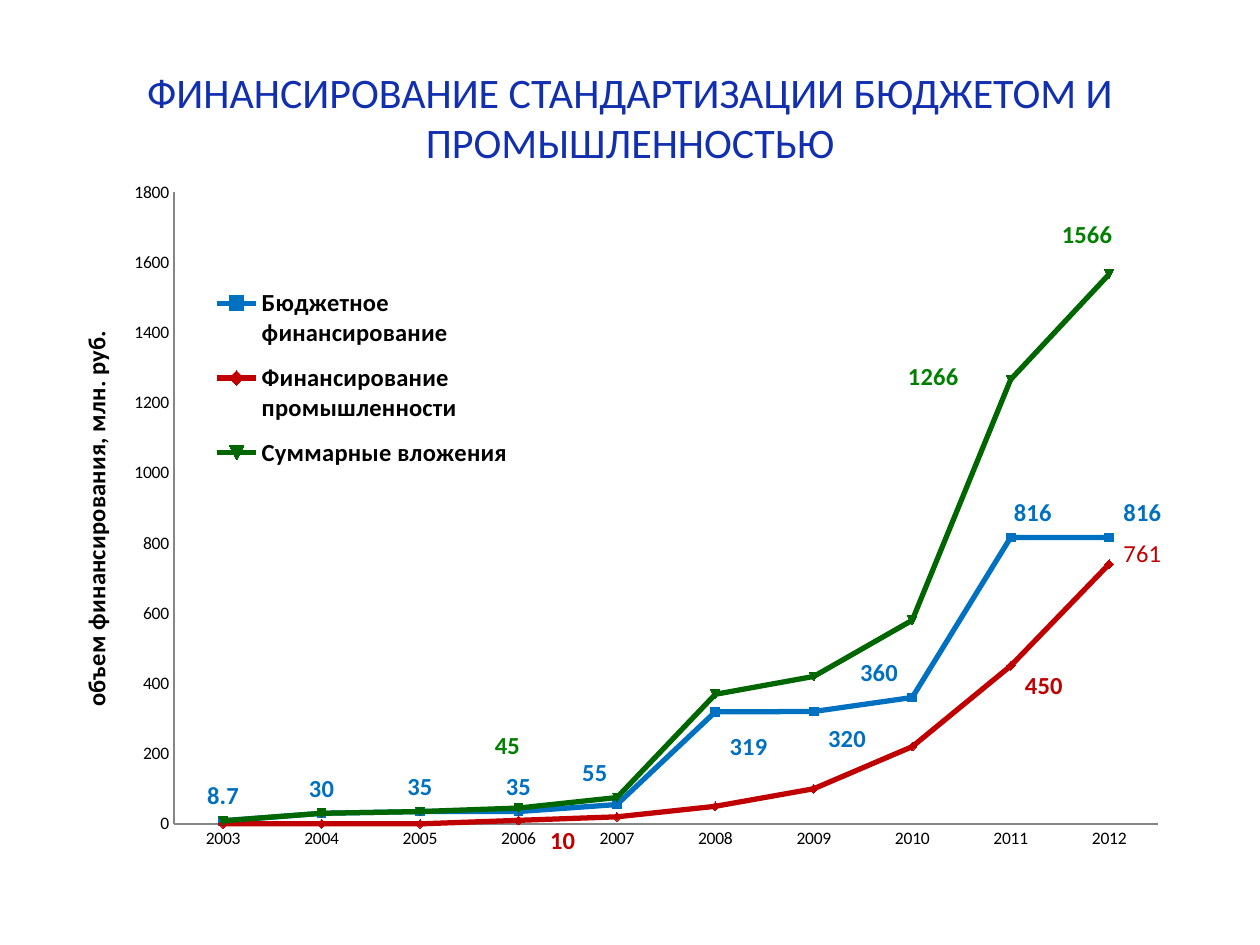
from lxml import etree
from pptx import Presentation
from pptx.chart.data import CategoryChartData
from pptx.dml.color import RGBColor
from pptx.enum.chart import XL_CHART_TYPE, XL_LABEL_POSITION, XL_LEGEND_POSITION, XL_TICK_MARK
from pptx.enum.text import MSO_ANCHOR, PP_ALIGN
from pptx.oxml.ns import qn
from pptx.util import Inches, Pt

LINE_MARKERS = XL_CHART_TYPE.LINE_MARKERS
ABOVE = XL_LABEL_POSITION.ABOVE
LEGEND_RIGHT = XL_LEGEND_POSITION.RIGHT
NO_TICKS = XL_TICK_MARK.NONE
MIDDLE = MSO_ANCHOR.MIDDLE
CENTER = PP_ALIGN.CENTER

FONT = "Calibri"
TITLE_BLUE = RGBColor(0x11, 0x2F, 0xAF)
BLACK = RGBColor(0, 0, 0)
AXIS_GRAY = RGBColor(0x86, 0x86, 0x86)
BLUE = RGBColor(0x00, 0x70, 0xC0)
RED = RGBColor(0xC0, 0x00, 0x00)
DARK_GREEN = RGBColor(0x00, 0x66, 0x00)
GREEN = RGBColor(0x00, 0x80, 0x00)

YEARS = [str(year) for year in range(2003, 2013)]

# Name, values, line colour, label colour, label every point,
# label shifts {point: (x, y)} as shares of the chart
SERIES = [
    ("Бюджетное финансирование", (8.7, 30, 35, 35, 55, 319, 320, 360, 816, 816),
     BLUE, BLUE, True,
     {4: (-0.02, -0.01), 5: (0.03, 0.08), 6: (0.03, 0.07),
      7: (-0.03, 0), 8: (0.02, 0), 9: (0.03, 0)}),
    ("Финансирование промышленности", (0, 0, 0, 10, 20, 50, 100, 220, 450, 740),
     RED, RED, False,
     {3: (0.04, 0.06), 8: (0.03, 0.06), 9: (0.03, 0.02)}),
    ("Суммарные вложения", (8.7, 30, 35, 45, 75, 369, 420, 580, 1266, 1566),
     DARK_GREEN, GREEN, False,
     {3: (-0.01, -0.05), 8: (-0.07, 0.03), 9: (-0.02, -0.02)}),
]


def format_font(font, size, color=BLACK, bold=False):
    font.name = FONT
    font.size = Pt(size)
    font.bold = bold
    font.color.rgb = color


def write_text(frame, text, size, color=BLACK, bold=False, align=None):
    para = frame.paragraphs[0]
    para.alignment = align
    span = para.add_run()
    span.text = text
    format_font(span.font, size, color, bold)


def place(element, index, mode="edge", target=None, **fractions):
    """Give a chart part a manual layout, as its child number index."""
    for old in element.findall(qn("c:layout")):
        element.remove(old)
    layout = etree.Element(qn("c:layout"))
    manual = etree.SubElement(layout, qn("c:manualLayout"))
    settings = {}
    if target:
        settings["layoutTarget"] = target
    if mode == "edge":
        settings.update(xMode=mode, yMode=mode)
    settings.update(fractions)
    for name, value in settings.items():
        etree.SubElement(manual, qn("c:" + name)).set("val", str(value))
    element.insert(index, layout)


def add_title(page, text):
    box = page.shapes.add_textbox(Inches(0.5), Inches(0.3), Inches(9), Inches(1.25))
    box.text_frame.word_wrap = True
    box.text_frame.vertical_anchor = MIDDLE
    write_text(box.text_frame, text, 24, TITLE_BLUE, align=CENTER)


def format_axes(chart):
    for axis in (chart.category_axis, chart.value_axis):
        axis.has_major_gridlines = False
        axis.major_tick_mark = NO_TICKS
        axis.minor_tick_mark = NO_TICKS
        axis.format.line.color.rgb = AXIS_GRAY
        format_font(axis.tick_labels.font, 10)
    values = chart.value_axis
    values.minimum_scale = 0
    values.maximum_scale = 1800
    values.major_unit = 200
    title = values.axis_title
    write_text(title.text_frame, "объем финансирования, млн. руб.", 14, bold=True)
    place(title._element, 1, x=0, y=0.23)


def format_legend(chart):
    chart.has_legend = True
    legend = chart.legend
    legend.position = LEGEND_RIGHT
    legend.include_in_layout = False
    format_font(legend.font, 14, bold=True)
    place(legend._element, 1, x=0.12, y=0.16, w=0.28, h=0.28)


def format_series(series, line_color, label_color, label_all, shifts):
    series.smooth = False
    series.format.line.color.rgb = line_color
    series.format.line.width = Pt(3)
    marker = series.marker
    marker.size = 5
    marker.format.fill.solid()
    marker.format.fill.fore_color.rgb = label_color
    marker.format.line.color.rgb = line_color

    labels = series.data_labels
    labels.show_value = label_all
    labels.position = ABOVE
    format_font(labels.font, 14, label_color, True)
    for point, (x, y) in shifts.items():
        label = series.points[point].data_label
        label.position = ABOVE
        format_font(label.font, 14, label_color, True)
        node = series._element.xpath(f'c:dLbls/c:dLbl[c:idx/@val="{point}"]')[0]
        place(node, 1, mode="factor", x=x, y=y)
    # Shifted labels stand free, without leader lines
    for leader in series._element.xpath("c:dLbls/c:showLeaderLines"):
        leader.set("val", "0")


def add_funding_chart(page):
    data = CategoryChartData()
    data.categories = YEARS
    for name, values, *_ in SERIES:
        data.add_series(name, values)
    chart = page.shapes.add_chart(LINE_MARKERS, Inches(0.59), Inches(1.23),
                                  Inches(8.78), Inches(5.9), data).chart
    chart.has_title = False
    format_font(chart.font, 10)
    format_axes(chart)
    format_legend(chart)
    for series, (_, _, *style) in zip(chart.plots[0].series, SERIES):
        format_series(series, *style)
    # The last industry label carries its own text
    last_label = chart.plots[0].series[1].points[9].data_label
    write_text(last_label.text_frame, "761", 14, RED)
    plot_area = chart._chartSpace.chart.plotArea
    place(plot_area, 0, target="inner", x=0.09, y=0.05, w=0.89, h=0.85)


def main():
    deck = Presentation()
    deck.slide_width = Inches(10)
    deck.slide_height = Inches(7.5)
    page = deck.slides.add_slide(deck.slide_layouts[6])
    add_funding_chart(page)
    add_title(page, "ФИНАНСИРОВАНИЕ СТАНДАРТИЗАЦИИ БЮДЖЕТОМ И ПРОМЫШЛЕННОСТЬЮ")
    deck.save("out.pptx")


if __name__ == "__main__":
    main()
